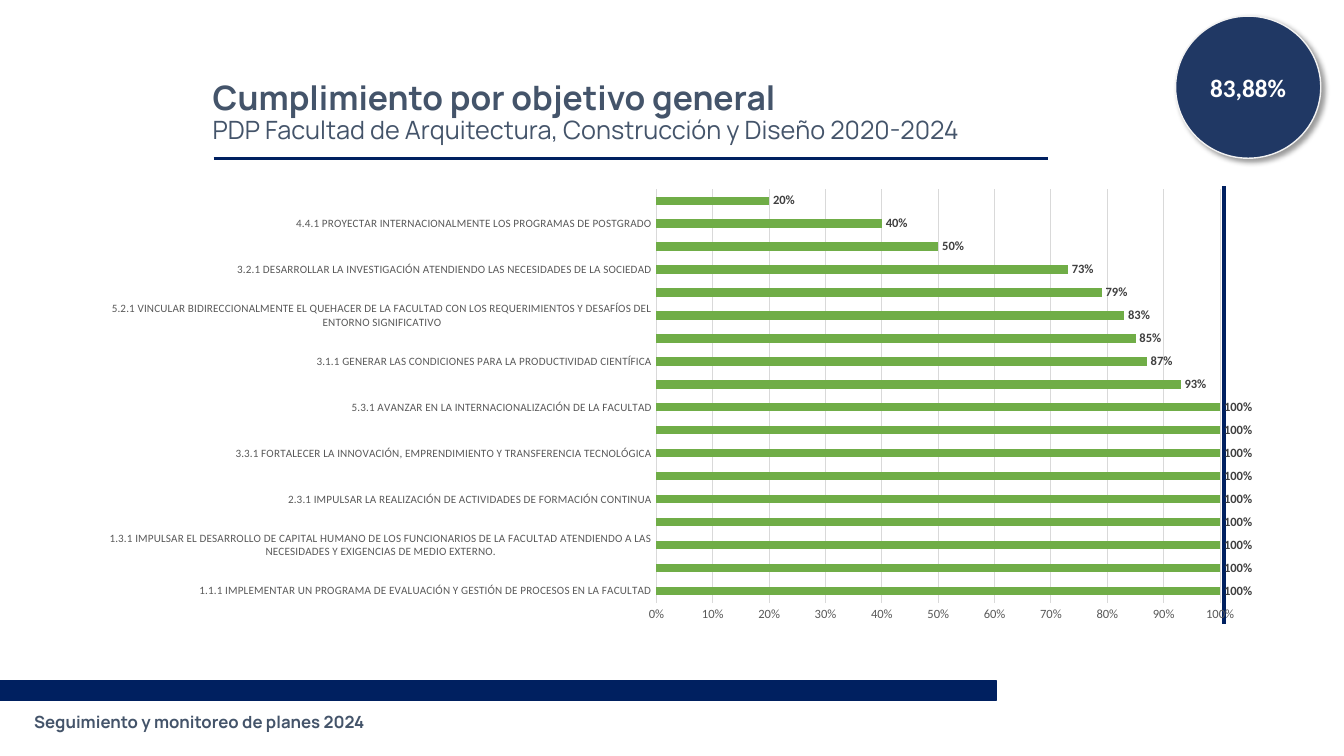
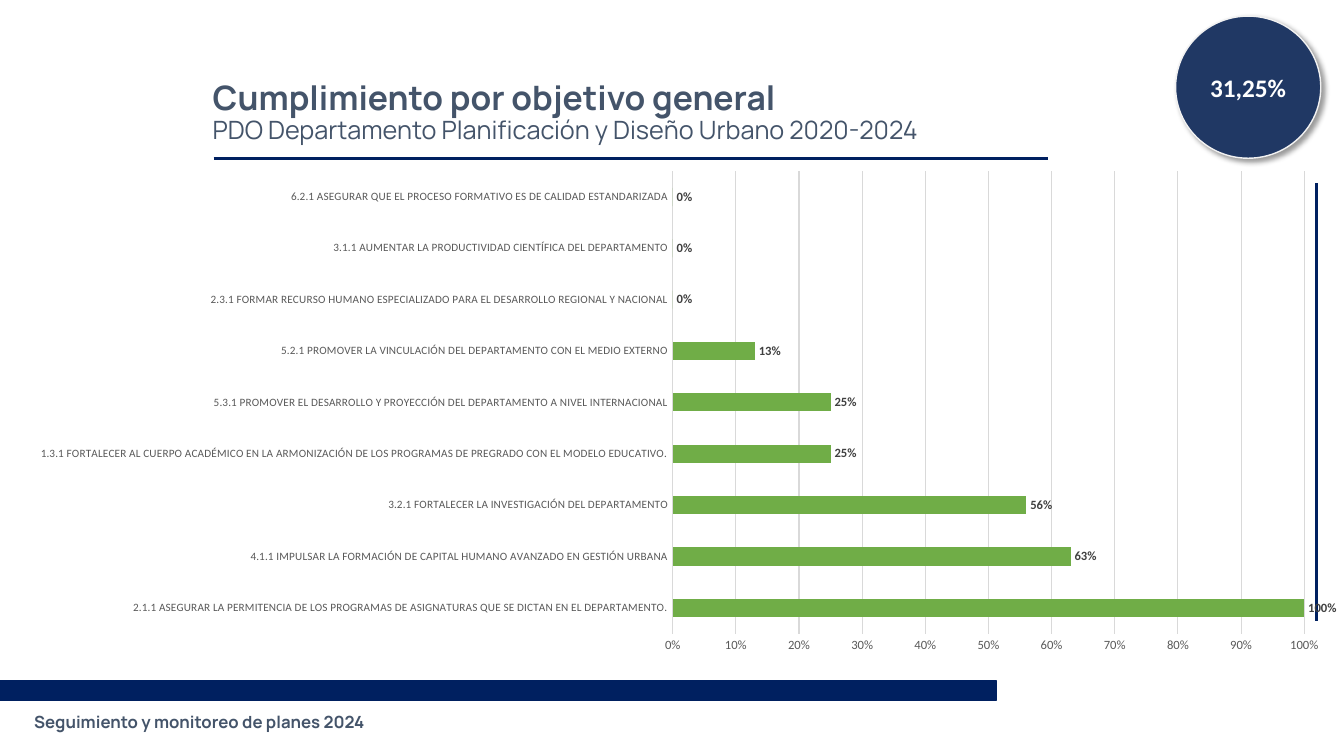
from lxml import etree
from pptx import Presentation
from pptx.chart.data import CategoryChartData
from pptx.dml.color import RGBColor
from pptx.enum.chart import XL_CHART_TYPE, XL_LABEL_POSITION, XL_TICK_MARK
from pptx.enum.shapes import MSO_CONNECTOR, MSO_SHAPE
from pptx.enum.text import MSO_ANCHOR, MSO_AUTO_SIZE, PP_ALIGN
from pptx.oxml import parse_xml
from pptx.oxml.ns import nsdecls, qn
from pptx.util import Inches, Pt

BAR_CLUSTERED = XL_CHART_TYPE.BAR_CLUSTERED
OUTSIDE_END = XL_LABEL_POSITION.OUTSIDE_END
NO_TICK = XL_TICK_MARK.NONE
STRAIGHT = MSO_CONNECTOR.STRAIGHT
RECTANGLE, OVAL = MSO_SHAPE.RECTANGLE, MSO_SHAPE.OVAL
MIDDLE = MSO_ANCHOR.MIDDLE
NO_AUTOFIT = MSO_AUTO_SIZE.NONE
LEFT, CENTER = PP_ALIGN.LEFT, PP_ALIGN.CENTER

COLORS = {
    name: RGBColor.from_string(value)
    for name, value in {
        "navy": "002060", "badge": "203864", "badge_edge": "F2F2F2",
        "heading": "44546A", "white": "FFFFFF", "black": "000000",
        "bar": "70AD47", "grid": "D9D9D9", "axis": "595959", "label": "404040",
    }.items()
}
HEADING_FONT, CHART_FONT = "Manrope", "Calibri"
HEADING = "Cumplimiento por objetivo general"
FOOTER = "Seguimiento y monitoreo de planes 2024"

BADGE_SHADOW = f"""<a:outerShdw {nsdecls('a')} blurRad="50800" dist="38100"
    dir="2700000" algn="tl" rotWithShape="0">
  <a:srgbClr val="000000"><a:alpha val="40000"/></a:srgbClr>
</a:outerShdw>"""

# Each slide: subtitle, badge, chart box, target line (x, top, bottom),
# inner plot area as fractions of the chart (None = automatic), objectives.
# A bar without an axis label has an empty name.
SLIDES = [
    {
        "subtitle": "PDP Facultad de Arquitectura, Construcción y Diseño 2020-2024",
        "badge": "83,88%",
        "chart": (0.92, 1.74, 11.5, 4.56),
        "target": (12.14, 1.85, 6.19),
        "plot": {"x": 0.49, "y": 0.03, "w": 0.49, "h": 0.9},
        "objectives": [
            ("1.1.1 IMPLEMENTAR UN PROGRAMA DE EVALUACIÓN Y GESTIÓN DE PROCESOS EN LA FACULTAD", 1),
            ("", 1),
            ("1.3.1 IMPULSAR EL DESARROLLO DE CAPITAL HUMANO DE LOS FUNCIONARIOS DE LA FACULTAD "
             "ATENDIENDO A LAS NECESIDADES Y EXIGENCIAS DE MEDIO EXTERNO.", 1),
            ("", 1),
            ("2.3.1 IMPULSAR LA REALIZACIÓN DE ACTIVIDADES DE FORMACIÓN CONTINUA", 1),
            ("", 1),
            ("3.3.1 FORTALECER LA INNOVACIÓN, EMPRENDIMIENTO Y TRANSFERENCIA TECNOLÓGICA", 1),
            ("", 1),
            ("5.3.1 AVANZAR EN LA INTERNACIONALIZACIÓN DE LA FACULTAD", 1),
            ("", 0.93),
            ("3.1.1 GENERAR LAS CONDICIONES PARA LA PRODUCTIVIDAD CIENTÍFICA", 0.87),
            ("", 0.85),
            ("5.2.1 VINCULAR BIDIRECCIONALMENTE EL QUEHACER DE LA FACULTAD CON LOS "
             "REQUERIMIENTOS Y DESAFÍOS DEL ENTORNO SIGNIFICATIVO", 0.83),
            ("", 0.79),
            ("3.2.1 DESARROLLAR LA INVESTIGACIÓN ATENDIENDO LAS NECESIDADES DE LA SOCIEDAD", 0.73),
            ("", 0.5),
            ("4.4.1 PROYECTAR INTERNACIONALMENTE LOS PROGRAMAS DE POSTGRADO", 0.4),
            ("", 0.2),
        ],
    },
    {
        "subtitle": "PDO Departamento Planificación y Diseño Urbano 2020-2024",
        "badge": "31,25%",
        "chart": (0.14, 1.6, 13.2, 4.97),
        "target": (13.06, 1.82, 6.16),
        "plot": None,
        "objectives": [
            ("2.1.1 ASEGURAR LA PERMITENCIA DE LOS PROGRAMAS DE ASIGNATURAS QUE SE DICTAN EN EL "
             "DEPARTAMENTO.", 1),
            ("4.1.1 IMPULSAR LA FORMACIÓN DE CAPITAL HUMANO AVANZADO EN GESTIÓN URBANA", 0.63),
            ("3.2.1 FORTALECER LA INVESTIGACIÓN DEL DEPARTAMENTO", 0.56),
            ("1.3.1 FORTALECER AL CUERPO ACADÉMICO EN LA ARMONIZACIÓN DE LOS PROGRAMAS DE "
             "PREGRADO CON EL MODELO EDUCATIVO.", 0.25),
            ("5.3.1 PROMOVER EL DESARROLLO Y PROYECCIÓN DEL DEPARTAMENTO A NIVEL INTERNACIONAL", 0.25),
            ("5.2.1 PROMOVER LA VINCULACIÓN DEL DEPARTAMENTO CON EL MEDIO EXTERNO", 0.13),
            ("2.3.1 FORMAR RECURSO HUMANO ESPECIALIZADO PARA EL DESARROLLO REGIONAL Y NACIONAL", 0),
            ("3.1.1 AUMENTAR LA PRODUCTIVIDAD CIENTÍFICA DEL DEPARTAMENTO", 0),
            ("6.2.1 ASEGURAR QUE EL PROCESO FORMATIVO ES DE CALIDAD ESTANDARIZADA", 0),
        ],
    },
]


def set_font(font, name, size, color, bold=False):
    font.name, font.size, font.bold = name, Pt(size), bold
    font.color.rgb = COLORS[color]


def add_filled_shape(slide, kind, box, fill, edge=None):
    """Add a shadowless shape, outlined only when an edge colour is given."""
    shape = slide.shapes.add_shape(kind, *map(Inches, box))
    shape.shadow.inherit = False
    shape.fill.solid()
    shape.fill.fore_color.rgb = COLORS[fill]
    if edge:
        shape.line.color.rgb = COLORS[edge]
        shape.line.width = Pt(1)
    else:
        shape.line.fill.background()
    return shape


presentation = Presentation()
presentation.slide_width = Inches(13.33)
presentation.slide_height = Inches(7.5)
title_only = presentation.slide_layouts[5]

for content in SLIDES:
    slide = presentation.slides.add_slide(title_only)

    # Title and subtitle
    title = slide.shapes.title
    title.left, title.top = Inches(2.01), Inches(0.4)
    title.width, title.height = Inches(10.41), Inches(1.45)
    title_frame = title.text_frame
    title_frame.text = HEADING + "\n" + content["subtitle"]
    title_frame.auto_size = NO_AUTOFIT
    title_frame.word_wrap = True
    title_frame.vertical_anchor = MIDDLE
    for paragraph, size, bold in zip(title_frame.paragraphs, (24, 18), (True, False)):
        paragraph.alignment = LEFT
        paragraph.line_spacing = 0.9
        set_font(paragraph.runs[0].font, HEADING_FONT, size, "heading", bold)

    # Band, footer and badge
    add_filled_shape(slide, RECTANGLE, (0, 6.75, 9.88, 0.2), "navy", "navy")
    footer = add_filled_shape(slide, RECTANGLE, (0.24, 6.97, 4.07, 0.38), "white")
    badge = add_filled_shape(slide, OVAL, (11.66, 0.16, 1.44, 1.41), "badge", "badge_edge")
    badge.element.spPr.find(qn("a:effectLst")).append(parse_xml(BADGE_SHADOW))
    for shape, text, alignment, style in (
        (footer, FOOTER, LEFT, (HEADING_FONT, 12, "heading", True)),
        (badge, content["badge"], CENTER, (CHART_FONT, 18, "white", True)),
    ):
        shape.text_frame.text = text
        shape.text_frame.vertical_anchor = MIDDLE
        paragraph = shape.text_frame.paragraphs[0]
        paragraph.alignment = alignment
        set_font(paragraph.runs[0].font, *style)

    # Title rule and 100 % target line
    target_x, target_top, target_bottom = content["target"]
    for ends in ((2.12, 1.57, 10.39, 1.57), (target_x, target_top, target_x, target_bottom)):
        line = slide.shapes.add_connector(STRAIGHT, *map(Inches, ends))
        line.line.color.rgb = COLORS["navy"]
        line.line.width = Pt(2.25)
        etree.SubElement(line.element.spPr, qn("a:effectLst"))

    # Chart
    categories, values = zip(*content["objectives"])
    chart_data = CategoryChartData(number_format="0%")
    chart_data.categories = categories
    chart_data.add_series("Series 1", values)
    chart = slide.shapes.add_chart(
        BAR_CLUSTERED, *map(Inches, content["chart"]), chart_data).chart
    chart.has_title = False
    chart.has_legend = False
    set_font(chart.font, CHART_FONT, 10, "black")

    for axis, size in ((chart.category_axis, 8), (chart.value_axis, 9)):
        axis.major_tick_mark = NO_TICK
        axis.minor_tick_mark = NO_TICK
        set_font(axis.tick_labels.font, CHART_FONT, size, "axis")
    value_axis = chart.value_axis
    value_axis.minimum_scale, value_axis.maximum_scale = 0, 1
    value_axis.tick_labels.number_format = "0%"
    value_axis.tick_labels.number_format_is_linked = False
    value_axis.format.line.fill.background()
    for line in (chart.category_axis.format.line, value_axis.major_gridlines.format.line):
        line.color.rgb = COLORS["grid"]
        line.width = Pt(0.75)

    plot = chart.plots[0]
    plot.gap_width = 182
    plot.vary_by_categories = False
    bar_fill = plot.series[0].format.fill
    bar_fill.solid()
    bar_fill.fore_color.rgb = COLORS["bar"]
    plot.has_data_labels = True
    labels = plot.data_labels
    labels.show_value = True
    labels.position = OUTSIDE_END
    labels.number_format = "0%"
    labels.number_format_is_linked = False
    set_font(labels.font, CHART_FONT, 9, "label", True)

    if content["plot"]:
        plot_area = chart.element.chart.plotArea
        for old_layout in plot_area.findall(qn("c:layout")):
            plot_area.remove(old_layout)
        layout = etree.Element(qn("c:layout"))
        manual = etree.SubElement(layout, qn("c:manualLayout"))
        settings = {"layoutTarget": "inner", "xMode": "edge", "yMode": "edge", **content["plot"]}
        for tag, value in settings.items():
            etree.SubElement(manual, qn(f"c:{tag}")).set("val", str(value))
        plot_area.insert(0, layout)

presentation.save("out.pptx")
